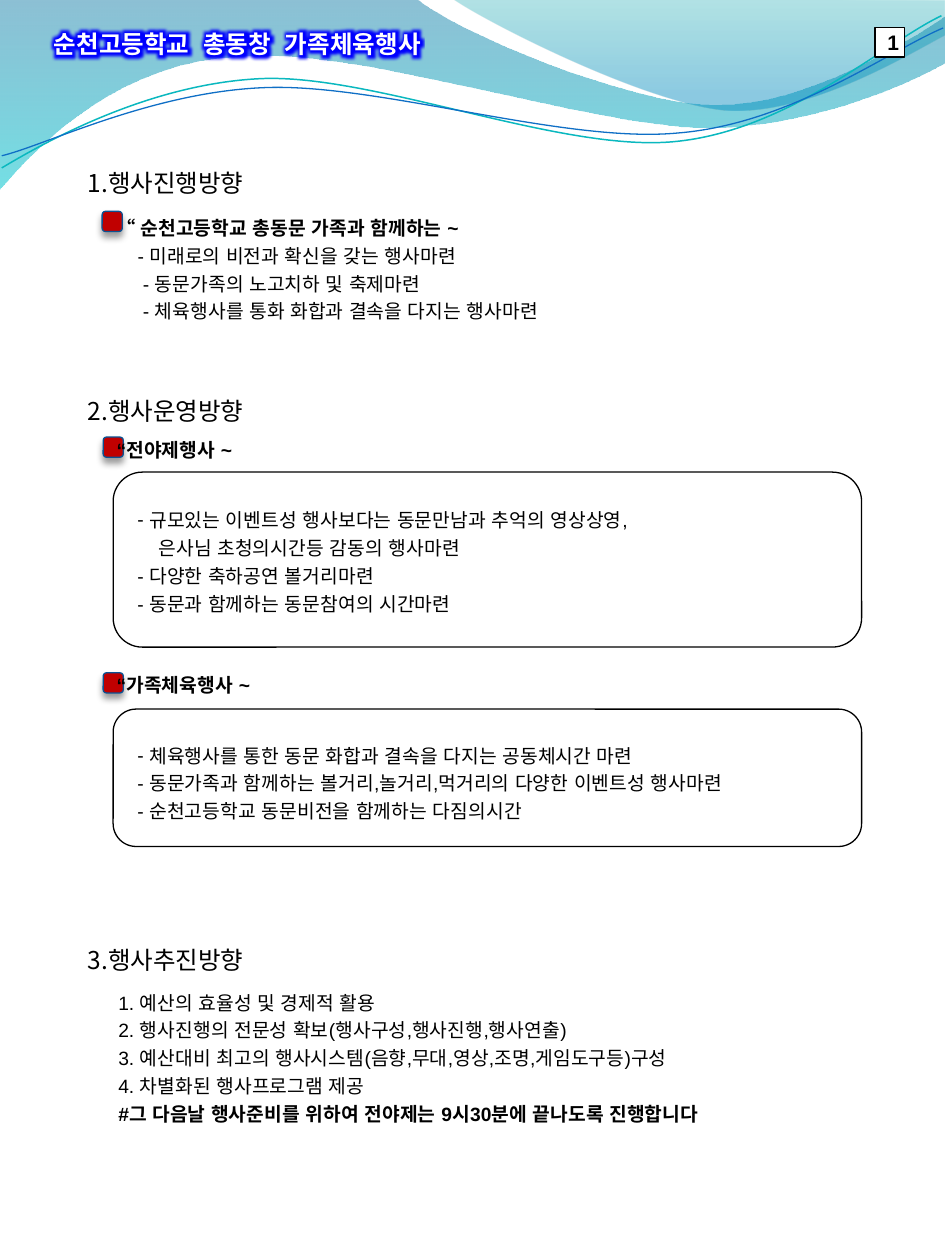
from dataclasses import dataclass
from typing import Optional

from lxml.etree import SubElement
from pptx import Presentation
from pptx.dml.color import RGBColor
from pptx.enum.shapes import MSO_SHAPE
from pptx.enum.text import MSO_ANCHOR, MSO_AUTO_SIZE, PP_ALIGN
from pptx.oxml import parse_xml
from pptx.oxml.ns import nsdecls, qn
from pptx.util import Pt

COLORS = {
    "black": "000000", "white": "FFFFFF", "glow": "0000FF",
    "marker": "C00000", "marker_line": "0B5292",
    "deep_blue": "0074A1", "cyan": "00C6CF", "teal": "00A1A9", "sky": "008BBF",
    "teal_line": "0AB8BF", "blue_line": "0F6FC6",
}
KOREAN = "Noto Sans CJK KR"
LATIN = "Arial"


@dataclass
class Line:
    text: str
    indent: float = 0
    bold: bool = False
    bullet: Optional[str] = None
    lead: str = ""  # opening characters set in the Korean font


@dataclass
class Wave:
    """Points in pt; a segment has one point (straight) or three (cubic)."""
    start: tuple
    segments: list
    stops: tuple = ()
    line: Optional[str] = None
    line_width: float = 0
    rotation: float = 0


@dataclass
class Event:
    label: str
    label_top: float
    marker_top: float
    frame_top: float
    frame_height: float
    text_top: float
    text_height: float
    lines: list


WAVES = [
    Wave((0, -1), [
        [(238, -1)],
        [(257, 16), (359, 60), (410, 60)], [(461, 60), (518, 24), (540, 9)],
        [(541, 35)],
        [(531, 42), (469, 73), (402, 73)], [(335, 72), (206, 27), (139, 32)],
        [(70, 34), (24, 80), (-1, 109)],
    ], stops=(("deep_blue", 0, 45), ("cyan", 1, 55))),
    Wave((258.5, -1), [
        [(275, 11), (368, 59), (415, 63)], [(462, 66), (519, 31), (540, 20)],
        [(540, 0)],
    ], stops=(("teal", 0, 30), ("sky", 0.8, 45))),
    Wave((-0.6, 83.3), [
        [(25.1, 69.5), (85.6, 39.3), (149.6, 39.3)],
        [(213.7, 39.4), (318.5, 89.4), (383.7, 86.4)],
        [(449.9, 83.5), (507.2, 35.2), (539.9, 21.7)],
    ], line="teal_line", line_width=0.85, rotation=357.3),
    Wave((-0.2, 76.3), [
        [(25.1, 71.5), (88.4, 43.4), (153.4, 44.5)],
        [(217.5, 45.5), (321.7, 84.5), (386, 81.5)],
        [(451.1, 79.5), (509, 40.2), (540.6, 28.7)],
    ], line="blue_line", line_width=0.75, rotation=357.3),
]
HEADINGS = [("1.행사진행방향", 93), ("2.행사운영방향", 223.3), ("3.행사추진방향", 537)]
DIRECTION = [
    Line("순천고등학교 총동문 가족과 함께하는 ~", bold=True, lead="“ "),
    Line("- 미래로의 비전과 확신을 갖는 행사마련", indent=12),
    Line("- 동문가족의 노고치하 및 축제마련", indent=15),
    Line("- 체육행사를 통화 화합과 결속을 다지는 행사마련", indent=15),
]
EVENTS = [
    Event("“전야제행사 ~", 247, 249.8, 269.8, 100, 284.5, 85, [
        Line(" 규모있는 이벤트성 행사보다는 동문만남과 추억의 영상상영,", bullet="-"),
        Line("은사님 초청의시간등 감동의 행사마련", indent=12),
        Line("- 다양한 축하공연 볼거리마련"),
        Line("- 동문과 함께하는 동문참여의 시간마련"),
    ]),
    Event("“가족체육행사 ~", 381, 384.5, 405.2, 78.5, 419, 53, [
        Line(" 체육행사를 통한 동문 화합과 결속을 다지는 공동체시간 마련", bullet="-"),
        Line("- 동문가족과 함께하는 볼거리,놀거리,먹거리의 다양한 이벤트성 행사마련"),
        Line("- 순천고등학교 동문비전을 함께하는 다짐의시간"),
    ]),
]
PLAN = [
    Line("1. 예산의 효율성 및 경제적 활용"),
    Line("2. 행사진행의 전문성 확보(행사구성,행사진행,행사연출)"),
    Line("3. 예산대비 최고의 행사시스템(음향,무대,영상,조명,게임도구등)구성"),
    Line("4. 차별화된 행사프로그램 제공"),
    Line("#그 다음날 행사준비를 위하여 전야제는 9시30분에 끝나도록 진행합니다", bold=True),
]


def rgb(name: str) -> RGBColor:
    return RGBColor.from_string(COLORS[name])


def write_text(shape, lines: list, *, size: float = 11, font: str = LATIN,
               east_asian: str = LATIN, color: str = "black", align=PP_ALIGN.LEFT,
               anchor=MSO_ANCHOR.TOP, spacing: float = 1.0, wrap: bool = True) -> None:
    frame = shape.text_frame
    frame.auto_size = MSO_AUTO_SIZE.NONE
    frame.word_wrap = wrap
    frame.vertical_anchor = anchor
    for index, line in enumerate(lines):
        paragraph = frame.add_paragraph() if index else frame.paragraphs[0]
        paragraph.alignment = align
        paragraph.line_spacing = spacing
        for text, typeface in ((line.lead, KOREAN), (line.text, east_asian)):
            if not text:
                continue
            run = paragraph.add_run()
            run.text = text
            run.font.size = Pt(size)
            run.font.bold = line.bold
            run.font.color.rgb = rgb(color)
            run.font.name = font
            SubElement(run.font._element, qn("a:ea")).set("typeface", typeface)
        properties = paragraph._p.get_or_add_pPr()
        if line.indent:
            properties.set("marL", str(Pt(line.indent)))
        if line.bullet:
            properties.set("marL", "0")
            properties.set("indent", "0")
            SubElement(properties, qn("a:buFont")).set("typeface", LATIN)
            SubElement(properties, qn("a:buChar")).set("char", line.bullet)


def add_text(slide, lines: list, left: float, top: float, width: float,
             height: float, **text_format) -> None:
    box = slide.shapes.add_textbox(Pt(left), Pt(top), Pt(width), Pt(height))
    write_text(box, lines, **text_format)


def paint(shape, fill: Optional[str] = None, line: Optional[str] = None,
          line_width: float = 0.75) -> None:
    shape.shadow.inherit = False
    if fill:
        shape.fill.solid()
        shape.fill.fore_color.rgb = rgb(fill)
    else:
        shape.fill.background()
    if line:
        shape.line.color.rgb = rgb(line)
        shape.line.width = Pt(line_width)
    else:
        shape.line.fill.background()


def add_box(slide, kind, left: float, top: float, width: float, height: float,
            fill: Optional[str] = None, line: Optional[str] = None):
    shape = slide.shapes.add_shape(kind, Pt(left), Pt(top), Pt(width), Pt(height))
    paint(shape, fill, line)
    return shape


def add_marker(slide, left: float, top: float) -> None:
    marker = add_box(slide, MSO_SHAPE.ROUNDED_RECTANGLE, left, top, 11.5, 11.5,
                     "marker", "marker_line")
    marker._element.spPr.find(qn("a:effectLst")).append(parse_xml(
        f'<a:outerShdw {nsdecls("a")} blurRad="{Pt(4)}" dist="{Pt(3)}" dir="5400000" '
        f'rotWithShape="0"><a:srgbClr val="{COLORS["black"]}">'
        '<a:alpha val="40000"/></a:srgbClr></a:outerShdw>'))


def curve_segments(shape, segments: list) -> None:
    """Turn each run of three straight steps of a cubic segment into one curve."""
    steps = iter(list(shape._element.iter(qn("a:lnTo"))))
    for segment in segments:
        group = [next(steps) for _ in segment]
        if len(group) == 3:
            curve = parse_xml(f'<a:cubicBezTo {nsdecls("a")}/>')
            group[0].addprevious(curve)
            for step in group:
                curve.append(step[0])
                step.getparent().remove(step)


def add_wave(slide, wave: Wave) -> None:
    builder = slide.shapes.build_freeform(Pt(wave.start[0]), Pt(wave.start[1]))
    vertices = [(Pt(x), Pt(y)) for segment in wave.segments for x, y in segment]
    builder.add_line_segments(vertices, close=bool(wave.stops))
    shape = builder.convert_to_shape()
    curve_segments(shape, wave.segments)
    shape.rotation = wave.rotation
    paint(shape, line=wave.line, line_width=wave.line_width)
    if wave.stops:
        shape.fill.gradient()
        shape.fill.gradient_angle = 270
        for stop, (color, position, opacity) in zip(shape.fill.gradient_stops, wave.stops):
            stop.color.rgb = rgb(color)
            stop.position = position
            color_element = stop._gs.find(qn("a:srgbClr"))
            SubElement(color_element, qn("a:alpha")).set("val", str(opacity * 1000))


def format_title(slide) -> None:
    title = slide.shapes.title
    title.left, title.top, title.width, title.height = Pt(23.5), Pt(13), Pt(640), Pt(24.5)
    write_text(title, [Line("순천고등학교  총동창  가족체육행사", bold=True)],
               size=14, font=KOREAN, color="white")
    latin = title.text_frame.paragraphs[0].runs[0].font._element.find(qn("a:latin"))
    latin.addprevious(parse_xml(
        f'<a:effectLst {nsdecls("a")}><a:glow rad="{Pt(8)}">'
        f'<a:srgbClr val="{COLORS["glow"]}"/></a:glow></a:effectLst>'))
    title._element.getparent().append(title._element)  # in front of the waves


def main() -> None:
    presentation = Presentation()
    presentation.slide_width, presentation.slide_height = Pt(540), Pt(720)
    slide = presentation.slides.add_slide(presentation.slide_layouts[5])
    for wave in WAVES:
        add_wave(slide, wave)
    format_title(slide)

    centered = dict(align=PP_ALIGN.CENTER, anchor=MSO_ANCHOR.MIDDLE, wrap=False)
    number = add_box(slide, MSO_SHAPE.RECTANGLE, 500, 15.8, 16.8, 16.8, "white", "black")
    number.text_frame.margin_left, number.text_frame.margin_right = Pt(4), Pt(0)
    write_text(number, [Line("1", bold=True)], size=12, **centered)

    for text, top in HEADINGS:
        heading = add_box(slide, MSO_SHAPE.ROUNDED_RECTANGLE, 20.9, top, 147.5, 22.5)
        write_text(heading, [Line(text)], size=14, font=KOREAN, east_asian=KOREAN, **centered)

    add_text(slide, DIRECTION, 59.6, 117.5, 354, 69, spacing=1.2)
    add_marker(slide, 58.4, 120.8)
    for event in EVENTS:
        add_box(slide, MSO_SHAPE.ROUNDED_RECTANGLE, 64.7, event.frame_top, 427.7,
                event.frame_height, "white", "black")
        add_marker(slide, 59, event.marker_top)
        add_text(slide, [Line(event.label, bold=True)], 59.6, event.label_top, 354, 21)
        add_text(slide, event.lines, 71.5, event.text_top, 438, event.text_height, spacing=1.2)
    add_text(slide, PLAN, 60.5, 560, 392, 87, spacing=1.2)
    presentation.save("out.pptx")


if __name__ == "__main__":
    main()
